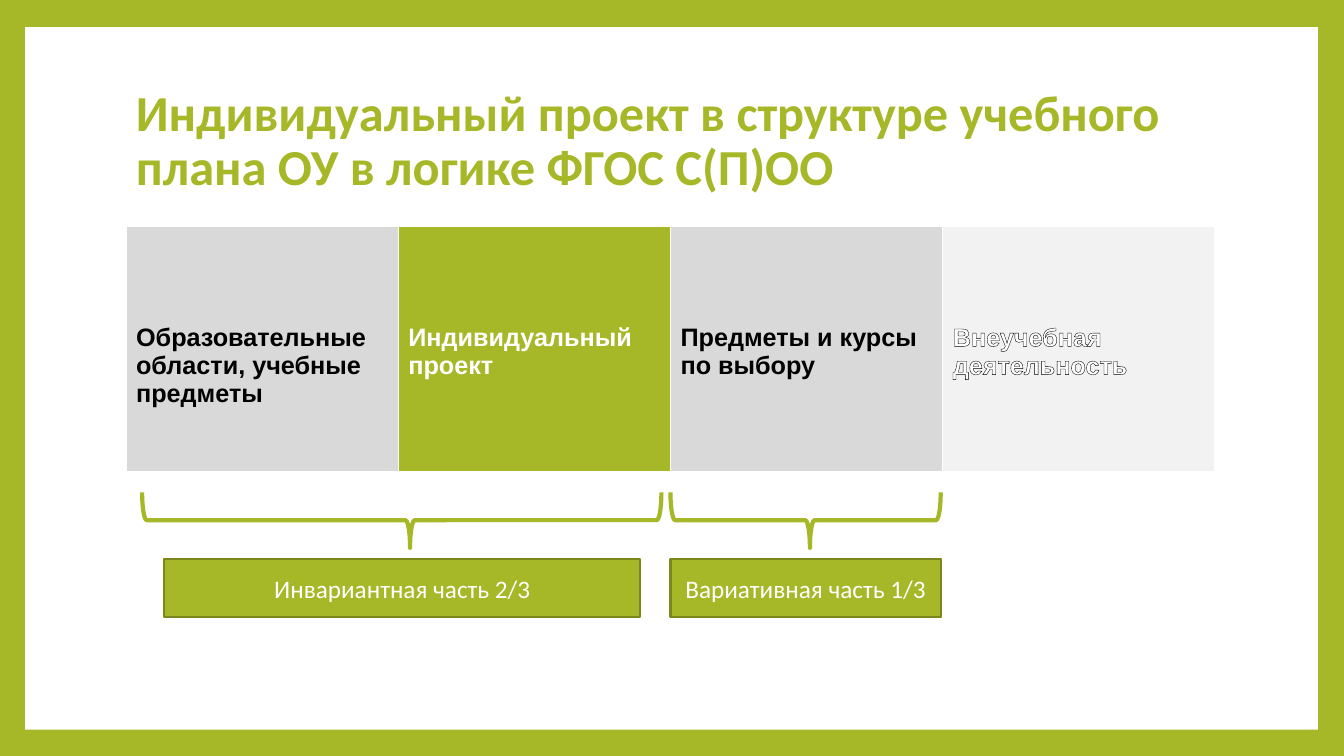
from dataclasses import dataclass

from lxml.etree import SubElement
from pptx import Presentation
from pptx.dml.color import RGBColor
from pptx.enum.shapes import MSO_SHAPE as Shape
from pptx.enum.text import MSO_ANCHOR as Anchor, PP_ALIGN as Align
from pptx.oxml import parse_xml
from pptx.oxml.ns import nsdecls, qn
from pptx.slide import Slide
from pptx.table import _Cell as Cell
from pptx.text.text import TextFrame
from pptx.util import Inches, Pt

GREEN = RGBColor(0xA6, 0xB7, 0x27)
DARK_GREEN = RGBColor(0x7B, 0x87, 0x1D)
GREY = RGBColor(0xD9, 0xD9, 0xD9)
LIGHT_GREY = RGBColor(0xF2, 0xF2, 0xF2)
WHITE = RGBColor(0xFF, 0xFF, 0xFF)
BLACK = RGBColor(0, 0, 0)

PLAN_LEFT, PLAN_TOP, PLAN_WIDTH, PLAN_HEIGHT = 1.25, 2.25, 10.8, 2.44
BORDERS = {"lnL": 1, "lnR": 1, "lnT": 1, "lnB": 3}


@dataclass(frozen=True)
class Component:
    text: str
    fill: RGBColor
    color: RGBColor
    outlined: bool = False


@dataclass(frozen=True)
class Part:
    """A share of the curriculum: a brace above a labelled box."""
    label: str
    brace_left: float
    brace_width: float
    box_left: float
    box_width: float


COMPONENTS = [
    Component("Образовательные области, учебные предметы", GREY, BLACK),
    Component("Индивидуальный проект", GREEN, WHITE),
    Component("Предметы и курсы\nпо выбору", GREY, BLACK),
    Component("Внеучебная деятельность", LIGHT_GREY, WHITE, outlined=True),
]
PARTS = [
    Part("Инвариантная часть 2/3", 1.41, 5.15, 1.63, 4.72),
    Part("Вариативная часть 1/3", 6.65, 2.68, 6.65, 2.68),
]


def write(frame: TextFrame, text: str, font: str, size: float,
          color: RGBColor, bold: bool = False) -> None:
    frame.text = text
    frame.word_wrap = True
    for paragraph in frame.paragraphs:
        for run in paragraph.runs:
            run.font.name = font
            run.font.size = Pt(size)
            run.font.bold = bold
            run.font.color.rgb = color


def add_border(cell: Cell) -> None:
    properties = cell._tc.get_or_add_tcPr()
    for index, (side, width) in enumerate(BORDERS.items()):
        properties.insert(index, parse_xml(
            f'<a:{side} {nsdecls("a")} w="{Pt(width)}"><a:solidFill>'
            f'<a:srgbClr val="{WHITE}"/></a:solidFill></a:{side}>'))


def outline_text(frame: TextFrame) -> None:
    for paragraph in frame.paragraphs:
        for run in paragraph.runs:
            line = parse_xml(f'<a:ln {nsdecls("a")} w="{Pt(0.75)}"/>')
            fill = SubElement(line, qn("a:solidFill"))
            SubElement(fill, qn("a:srgbClr"), val=str(BLACK))
            run.font._element.insert(0, line)


def add_frame(slide: Slide) -> None:
    """Green background with a white page inside."""
    slide.background.fill.solid()
    slide.background.fill.fore_color.rgb = GREEN
    page = slide.shapes.add_shape(Shape.RECTANGLE, Inches(0.25), Inches(0.27),
                                  Inches(12.82), Inches(6.97))
    page.shadow.inherit = False
    page.fill.solid()
    page.fill.fore_color.rgb = WHITE
    page.line.fill.background()


def add_title(slide: Slide) -> None:
    title = slide.shapes.add_textbox(Inches(PLAN_LEFT), Inches(0.67),
                                     Inches(PLAN_WIDTH), Inches(1.48)).text_frame
    write(title, "Индивидуальный проект в структуре учебного плана ОУ "
                 "в логике ФГОС С(П)ОО", "Calibri", 36, GREEN, bold=True)
    title.vertical_anchor = Anchor.MIDDLE
    title.paragraphs[0].line_spacing = 0.9


def add_plan(slide: Slide) -> None:
    plan = slide.shapes.add_table(1, len(COMPONENTS), Inches(PLAN_LEFT), Inches(PLAN_TOP),
                                  Inches(PLAN_WIDTH), Inches(PLAN_HEIGHT)).table
    for cell, component in zip(plan.rows[0].cells, COMPONENTS):
        cell.fill.solid()
        cell.fill.fore_color.rgb = component.fill
        cell.margin_top = Inches(0.96)
        write(cell.text_frame, component.text, "Arial", 18, component.color, bold=True)
        if component.outlined:
            outline_text(cell.text_frame)
        add_border(cell)


def add_part(slide: Slide, part: Part) -> None:
    depth, center_y = 0.55, 5.16
    center_x = part.brace_left + part.brace_width / 2
    brace = slide.shapes.add_shape(
        Shape.LEFT_BRACE, Inches(center_x - depth / 2),
        Inches(center_y - part.brace_width / 2), Inches(depth), Inches(part.brace_width))
    brace.rotation = 270
    brace.adjustments[0] = 0.083
    brace.adjustments[1] = 0.516
    brace.shadow.inherit = False
    brace.fill.background()
    brace.line.color.rgb = GREEN
    brace.line.width = Pt(3)

    box = slide.shapes.add_shape(Shape.RECTANGLE, Inches(part.box_left), Inches(5.55),
                                 Inches(part.box_width), Inches(0.57))
    box.shadow.inherit = False
    box.fill.solid()
    box.fill.fore_color.rgb = GREEN
    box.line.color.rgb = DARK_GREEN
    box.line.width = Pt(1.5)
    write(box.text_frame, part.label, "Calibri", 18, WHITE)
    box.text_frame.vertical_anchor = Anchor.MIDDLE
    box.text_frame.paragraphs[0].alignment = Align.CENTER


def main() -> None:
    deck = Presentation()
    deck.slide_width, deck.slide_height = Inches(13.33), Inches(7.5)
    slide = deck.slides.add_slide(deck.slide_layouts[6])
    add_frame(slide)
    add_title(slide)
    add_plan(slide)
    for part in PARTS:
        add_part(slide, part)
    deck.save("out.pptx")


if __name__ == "__main__":
    main()
